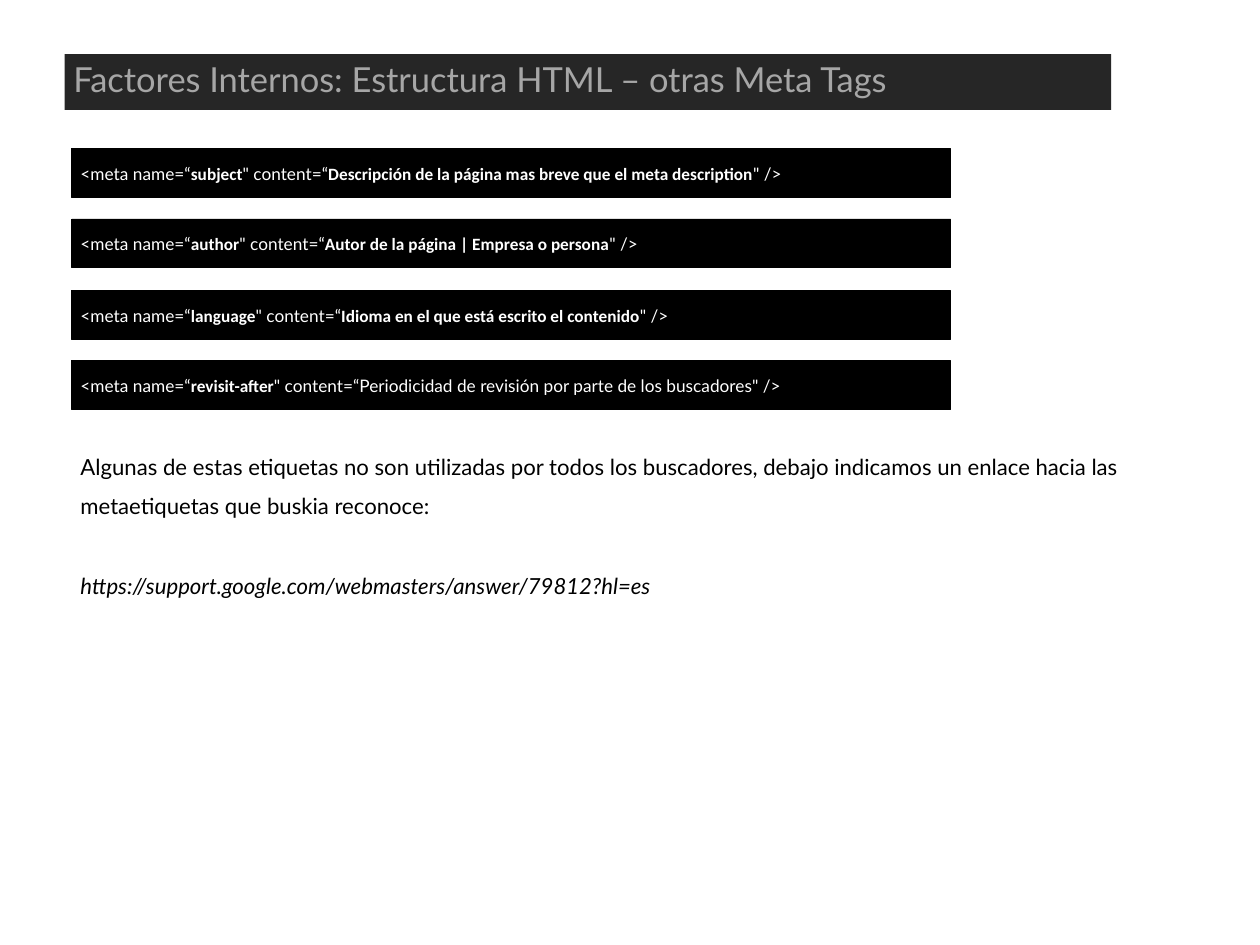
from pptx import Presentation
from pptx.dml.color import RGBColor
from pptx.enum import shapes, text
from pptx.util import Inches, Pt

COLORS = {"bar": "262626", "title": "A6A6A6", "black": "000000", "white": "FFFFFF"}

deck = Presentation()
deck.slide_width, deck.slide_height = Inches(14.22), Inches(10.66)
slide = deck.slides.add_slide(deck.slide_layouts[6])


def add_bar(left, top, width, height, color):
    bar = slide.shapes.add_shape(
        shapes.MSO_SHAPE.RECTANGLE,
        Inches(left), Inches(top), Inches(width), Inches(height))
    bar.shadow.inherit = False
    bar.fill.solid()
    bar.fill.fore_color.rgb = RGBColor.from_string(COLORS[color])
    bar.line.fill.background()
    return bar


def style(run, size, color, name="Lato", bold=False, italic=False):
    font = run.font
    font.name, font.size = name, Pt(size)
    font.bold, font.italic = bold, italic
    font.color.rgb = RGBColor.from_string(COLORS[color])


title = add_bar(0.73, 0.61, 11.81, 0.63, "bar")
frame = title.text_frame
frame.text = "Factores Internos: Estructura HTML – otras Meta Tags"
frame.vertical_anchor = text.MSO_ANCHOR.TOP
frame.paragraphs[0].alignment = text.PP_ALIGN.LEFT
style(frame.paragraphs[0].runs[0], 28, "title")

tags = [
    (1.68, "subject", "Descripción de la página mas breve que el meta description", True),
    (2.47, "author", "Autor de la página | Empresa o persona", True),
    (3.28, "language", "Idioma en el que está escrito el contenido", True),
    (4.07, "revisit-after", "Periodicidad de revisión por parte de los buscadores", False),
]
for top, name, value, strong in tags:
    bar = add_bar(0.81, top, 9.92, 0.55, "black")
    bar.line.color.rgb = RGBColor.from_string(COLORS["black"])
    bar.line.width = Pt(0.75)
    box = slide.shapes.add_textbox(Inches(0.81), Inches(top), Inches(12.28), Inches(0.45))
    box.text_frame.word_wrap = True
    box.text_frame.auto_size = text.MSO_AUTO_SIZE.SHAPE_TO_FIT_TEXT
    line = box.text_frame.paragraphs[0]
    line.line_spacing = 1.5
    parts = [("<meta name=“", False), (name, True), ('" content=“', False),
             (value, strong), ('" />', False)]
    for words, bold in parts:
        run = line.add_run()
        run.text = words
        style(run, 14, "white", "Calibri" if bold else "Lato", bold)

note = slide.shapes.add_textbox(Inches(0.81), Inches(4.91), Inches(12.99), Inches(1.92))
frame = note.text_frame
frame.word_wrap = True
frame.auto_size = text.MSO_AUTO_SIZE.SHAPE_TO_FIT_TEXT
frame.text = (
    "Algunas de estas etiquetas no son utilizadas por todos los buscadores, "
    "debajo indicamos un enlace hacia las metaetiquetas que buskia reconoce:\n"
    "https://support.google.com/webmasters/answer/79812?hl=es")
for line, italic in zip(frame.paragraphs, (False, True)):
    line.line_spacing = 1.5
    style(line.runs[0], 18, "black", italic=italic)
frame.paragraphs[1].space_before = Pt(32.5)

deck.save("out.pptx")
